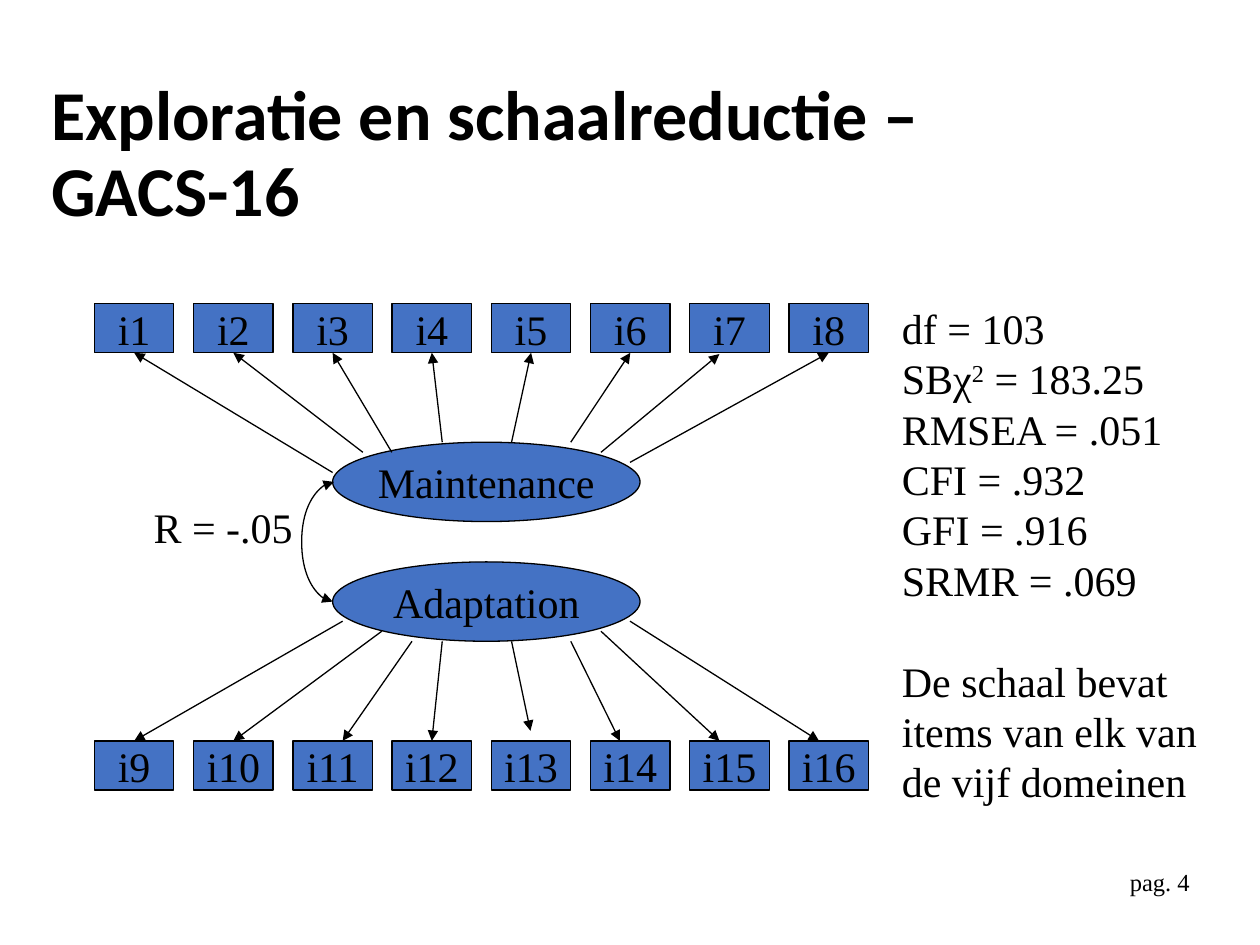
import dataclasses

import lxml.etree
import pptx
import pptx.dml.color
import pptx.enum.shapes
import pptx.enum.text
import pptx.oxml.ns
import pptx.util

Inches = pptx.util.Inches
Pt = pptx.util.Pt
qn = pptx.oxml.ns.qn
ALIGN = pptx.enum.text.PP_ALIGN
ANCHOR = pptx.enum.text.MSO_ANCHOR
AUTO_SIZE = pptx.enum.text.MSO_AUTO_SIZE
SHAPE = pptx.enum.shapes.MSO_SHAPE
CONNECTOR = pptx.enum.shapes.MSO_CONNECTOR


@dataclasses.dataclass(frozen=True)
class Theme:
    ink: str = "000000"
    node: str = "4472C4"
    body_font: str = "Times New Roman"
    title_font: str = "Calibri"
    title_size: int = 40
    body_size: int = 24
    footer_size: int = 14
    line_width: float = 0.75


THEME = Theme()

# Item rows
ITEM_LEFT, ITEM_PITCH = 0.75, 0.7875
ITEM_WIDTH, ITEM_HEIGHT = 0.63, 0.39
TOP_ROW, BOTTOM_ROW = 2.41, 5.88

# Factor ellipses
FACTOR_LEFT, FACTOR_WIDTH, FACTOR_HEIGHT = 2.64, 2.44, 0.63
MAINTENANCE_TOP, ADAPTATION_TOP = 3.51, 4.46

# Loadings: start of each arrow, and its tip where that misses the item's middle
MAINTENANCE_LOADINGS = [
    ((2.64, 3.75), None), ((2.88, 3.59), None),
    ((3.11, 3.59), None), ((3.51, 3.51), None),
    ((4.06, 3.51), None), ((4.53, 3.51), None),
    ((4.77, 3.59), (5.71, 2.81)), ((5, 3.67), None),
]
ADAPTATION_LOADINGS = [
    ((2.72, 4.93), None), ((3.03, 5.01), None),
    ((3.27, 5.09), (2.72, 5.88)), ((3.51, 5.09), None),
    ((4.06, 5.09), (4.21, 5.8)), ((4.53, 5.09), (4.92, 5.88)),
    ((4.77, 5.01), (5.71, 5.88)), ((5, 4.93), (6.5, 5.88)),
]

FIT_LINES = ["df = 103", "SBχ^2^ = 183.25", "RMSEA = .051",
             "CFI = .932", "GFI = .916", "SRMR = .069"]
CONCLUSION = "De schaal bevat items van elk van de vijf domeinen"


def color(value):
    return pptx.dml.color.RGBColor.from_string(value)


def write(frame, lines, *, size=THEME.body_size, font=THEME.body_font, bold=False,
          align=ALIGN.LEFT, anchor=ANCHOR.TOP, wrap=True, spacing=None):
    """Fill a text frame, one paragraph a line; text between ^ marks is raised."""
    frame.word_wrap = wrap
    frame.vertical_anchor = anchor
    for number, line in enumerate(lines):
        paragraph = frame.add_paragraph() if number else frame.paragraphs[0]
        paragraph.alignment = align
        paragraph.line_spacing = spacing
        for position, piece in enumerate(line.split("^")):
            run = paragraph.add_run()
            run.text = piece
            run.font.size = Pt(size)
            run.font.name = font
            run.font.bold = bold
            run.font.color.rgb = color(THEME.ink)
            if position % 2:
                run.font._element.set("baseline", "30000")


def add_text(slide, left, top, width, height, lines, **text_format):
    box = slide.shapes.add_textbox(Inches(left), Inches(top), Inches(width), Inches(height))
    write(box.text_frame, lines, **text_format)
    return box.text_frame


def add_node(slide, preset, left, top, width, height, label):
    node = slide.shapes.add_shape(preset, Inches(left), Inches(top),
                                  Inches(width), Inches(height))
    node.shadow.inherit = False
    node.fill.solid()
    node.fill.fore_color.rgb = color(THEME.node)
    node.line.color.rgb = color(THEME.ink)
    node.line.width = Pt(THEME.line_width)
    write(node.text_frame, [label], align=ALIGN.CENTER, anchor=ANCHOR.MIDDLE, wrap=False)
    return node


def add_factor(slide, top, label):
    add_node(slide, SHAPE.OVAL, FACTOR_LEFT, top, FACTOR_WIDTH, FACTOR_HEIGHT, label)


def add_items(slide, top, first):
    return [add_node(slide, SHAPE.RECTANGLE, ITEM_LEFT + column * ITEM_PITCH, top,
                     ITEM_WIDTH, ITEM_HEIGHT, f"i{first + column}")
            for column in range(8)]


def add_arrow(slide, kind, start, end, heads=("tailEnd",)):
    arrow = slide.shapes.add_connector(kind, *map(Inches, (*start, *end)))
    arrow.line.color.rgb = color(THEME.ink)
    arrow.line.width = Pt(THEME.line_width)
    for head in heads:
        lxml.etree.SubElement(arrow.line._get_or_add_ln(), qn(f"a:{head}"), type="triangle")
    lxml.etree.SubElement(arrow._element.spPr, qn("a:effectLst"))
    return arrow


def add_loadings(slide, items, loadings, side):
    for item, (start, tip) in zip(items, loadings):
        arrow = add_arrow(slide, CONNECTOR.STRAIGHT, start, tip or start)
        if tip is None:
            arrow.end_connect(item, side)


def add_correlation(slide):
    # The bend lies 0.25 inch to the left, as a multiple of the 0.01 inch width
    middle = FACTOR_HEIGHT / 2
    arc = add_arrow(slide, CONNECTOR.CURVE,
                    (FACTOR_LEFT, ADAPTATION_TOP + middle),
                    (FACTOR_LEFT + 0.01, MAINTENANCE_TOP + middle),
                    heads=("headEnd", "tailEnd"))
    adjustments = arc._element.spPr.find(qn("a:prstGeom")).get_or_add_avLst()
    lxml.etree.SubElement(adjustments, qn("a:gd"), name="adj1", fmla="val -2500000")
    label = add_text(slide, 1.12, 3.93, 1.31, 0.5, ["R = -.05"], wrap=False)
    label.auto_size = AUTO_SIZE.SHAPE_TO_FIT_TEXT


def main():
    deck = pptx.Presentation()
    deck.slide_width, deck.slide_height = Inches(10), Inches(7.5)
    slide = deck.slides.add_slide(deck.slide_layouts[6])

    # Page number and title
    add_text(slide, 7.17, 6.83, 2.42, 0.5, ["pag. 4 "],
             size=THEME.footer_size, align=ALIGN.RIGHT)
    title = add_text(slide, 0.31, 0.86, 9.42, 0.75,
                     ["Exploratie en schaalreductie – GACS-16"],
                     size=THEME.title_size, font=THEME.title_font, bold=True,
                     anchor=ANCHOR.MIDDLE, spacing=0.9)
    title.margin_right = Inches(1)

    # Factor model
    add_factor(slide, MAINTENANCE_TOP, "Maintenance")
    maintenance_items = add_items(slide, TOP_ROW, 1)
    add_factor(slide, ADAPTATION_TOP, "Adaptation")
    adaptation_items = add_items(slide, BOTTOM_ROW, 9)
    add_loadings(slide, maintenance_items, MAINTENANCE_LOADINGS, side=2)
    add_loadings(slide, adaptation_items, ADAPTATION_LOADINGS, side=0)
    add_correlation(slide)

    # Fit measures, with the conclusion one line below
    fit = add_text(slide, 7.06, 2.35, 2.74, 4.54, FIT_LINES + [CONCLUSION])
    fit.paragraphs[-1].space_before = Pt(28.8)

    deck.save("out.pptx")


if __name__ == "__main__":
    main()
